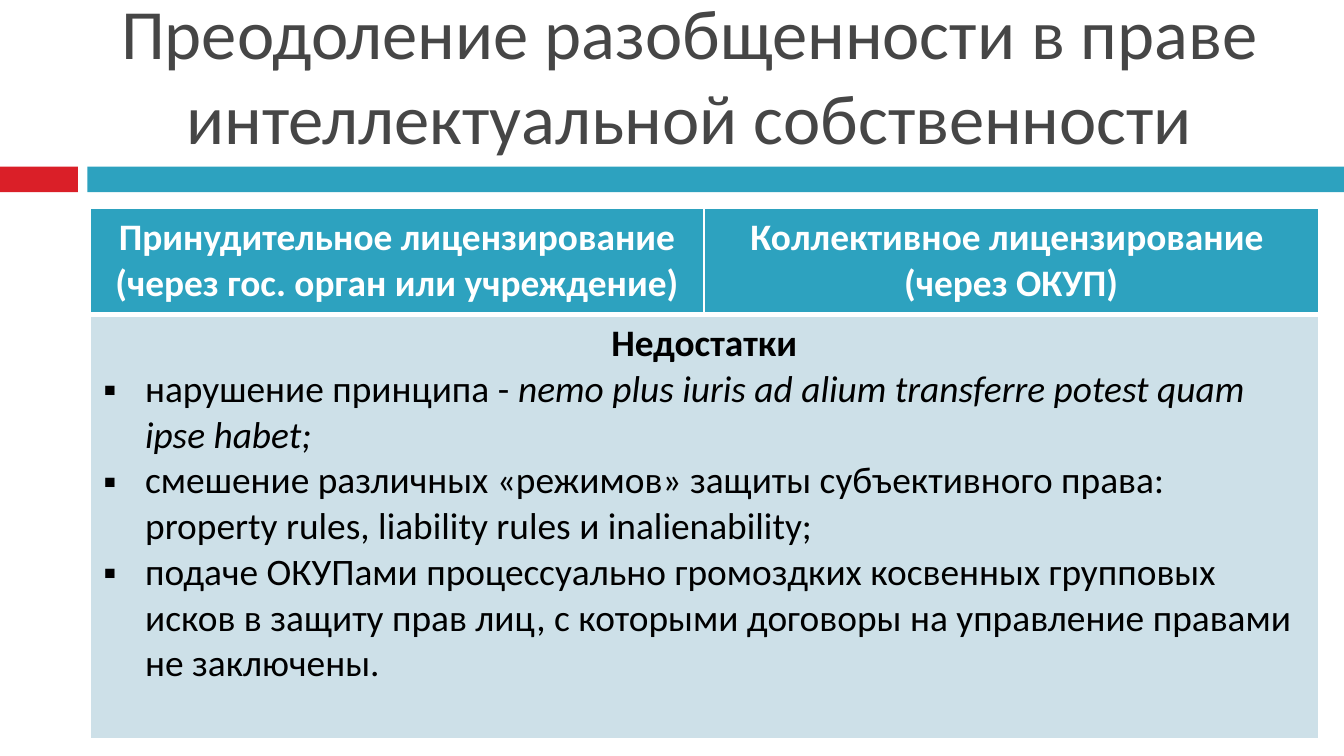
"""Builds a slide on overcoming fragmentation in intellectual property law."""
from lxml import etree
from pptx import Presentation
from pptx import util as u
from pptx.dml.color import RGBColor
from pptx.enum import shapes, text
from pptx.oxml import ns

COLORS = {"red": "DA1F28", "teal": "2DA2BF", "pale": "CDE0E8",
          "title": "464646", "white": "FFFFFF", "black": "000000"}
FONT = "Calibri"
SLIDE_WIDTH = 10
SLIDE_HEIGHT = SLIDE_WIDTH * 9 / 16
TITLE = "Преодоление разобщенности в праве интеллектуальной собственности"
HEADERS = [
    ["Принудительное лицензирование (через гос. орган или учреждение)"],
    ["Коллективное лицензирование ", "(через ОКУП)"],
]
DRAWBACKS = [
    [("нарушение принципа - ", False),
     ("nemo plus iuris ad alium transferre potest quam ipse habet;", True)],
    [("смешение различных «режимов» защиты субъективного права: "
      "property rules, liability rules и inalienability;", False)],
    [("подаче ОКУПами процессуально громоздких косвенных групповых исков "
      "в защиту прав лиц, с которыми договоры на управление правами "
      "не заключены.", False)],
]


def rgb(name):
    """Return the named palette colour."""
    return RGBColor.from_string(COLORS[name])


def add_text(paragraph, words, size=20, color="black", bold=False,
             italic=False, align=None):
    """Append a formatted run to a paragraph."""
    run = paragraph.add_run()
    run.text = words
    run.font.name, run.font.size = FONT, u.Pt(size)
    run.font.bold, run.font.italic = bold, italic
    run.font.color.rgb = rgb(color)
    if align is not None:
        paragraph.alignment = align


def add_bullet(paragraph, indent=0.31):
    """Give a paragraph a square bullet with a hanging indent."""
    props = paragraph._p.get_or_add_pPr()
    props.set("marL", str(u.Inches(indent)))
    props.set("indent", str(u.Inches(-indent)))
    etree.SubElement(props, ns.qn("a:buFont"), typeface="Arial")
    etree.SubElement(props, ns.qn("a:buChar"), char="▪")


def style_cell(cell, fill, top=1, bottom=1):
    """Fill a cell and draw its white borders."""
    cell.fill.solid()
    cell.fill.fore_color.rgb = rgb(fill)
    props = cell._tc.get_or_add_tcPr()
    widths = {"lnL": 1, "lnR": 1, "lnT": top, "lnB": bottom}
    for position, (side, width) in enumerate(widths.items()):
        border = etree.Element(ns.qn(f"a:{side}"), w=str(u.Pt(width)))
        solid = etree.SubElement(border, ns.qn("a:solidFill"))
        etree.SubElement(solid, ns.qn("a:srgbClr"), val=COLORS["white"])
        props.insert(position, border)


def add_title(slide, left, top, width, height):
    """Place the slide title, resting on the bottom of its box."""
    title = slide.shapes.title
    title.left, title.top = u.Inches(left), u.Inches(top)
    title.width, title.height = u.Inches(width), u.Inches(height)
    frame = title.text_frame
    frame.word_wrap = True
    frame.auto_size = text.MSO_AUTO_SIZE.NONE
    frame.vertical_anchor = text.MSO_ANCHOR.BOTTOM
    add_text(frame.paragraphs[0], TITLE, size=37.8, color="title",
             align=text.PP_ALIGN.CENTER)


def add_band(slide, left, top, width, height, accent=0.58, gap=0.07):
    """Draw the red accent and the teal bar beside it."""
    bar_offset = accent + gap
    for offset, length, color in ((0, accent, "red"),
                                  (bar_offset, width - bar_offset, "teal")):
        bar = slide.shapes.add_shape(
            shapes.MSO_SHAPE.RECTANGLE, u.Inches(left + offset),
            u.Inches(top), u.Inches(length), u.Inches(height))
        bar.shadow.inherit = False
        bar.fill.solid()
        bar.fill.fore_color.rgb = rgb(color)
        bar.line.fill.background()


def add_licensing_table(slide, left, top, width, height, header_height=0.79):
    """Compare the two kinds of licensing above their shared drawbacks."""
    table = slide.shapes.add_table(
        2, len(HEADERS), u.Inches(left), u.Inches(top),
        u.Inches(width), u.Inches(height)).table
    table.rows[0].height = u.Inches(header_height)
    table.rows[1].height = u.Inches(height - header_height)

    for column, lines in enumerate(HEADERS):
        header = table.cell(0, column)
        style_cell(header, "teal", bottom=3)
        style_cell(table.cell(1, column), "pale", top=3)
        frame = header.text_frame
        for number, line in enumerate(lines):
            paragraph = frame.add_paragraph() if number else frame.paragraphs[0]
            add_text(paragraph, line, color="white", bold=True,
                     align=text.PP_ALIGN.CENTER)

    drawbacks = table.cell(1, 0)
    drawbacks.merge(table.cell(1, len(HEADERS) - 1))
    frame = drawbacks.text_frame
    add_text(frame.paragraphs[0], "Недостатки", bold=True,
             align=text.PP_ALIGN.CENTER)
    for drawback in DRAWBACKS:
        paragraph = frame.add_paragraph()
        add_bullet(paragraph)
        for words, italic in drawback:
            add_text(paragraph, words, italic=italic)


def main():
    """Build and save the presentation."""
    deck = Presentation()
    deck.slide_width = u.Inches(SLIDE_WIDTH)
    deck.slide_height = u.Inches(SLIDE_HEIGHT)
    slide = deck.slides.add_slide(deck.slide_layouts[5])
    add_band(slide, 0, 1.24, SLIDE_WIDTH, 0.19)
    add_title(slide, 0.67, 0.13, 8.92, 1.1)
    add_licensing_table(slide, 0.67, 1.55, 9.14, 3.95)
    deck.save("out.pptx")


if __name__ == "__main__":
    main()
